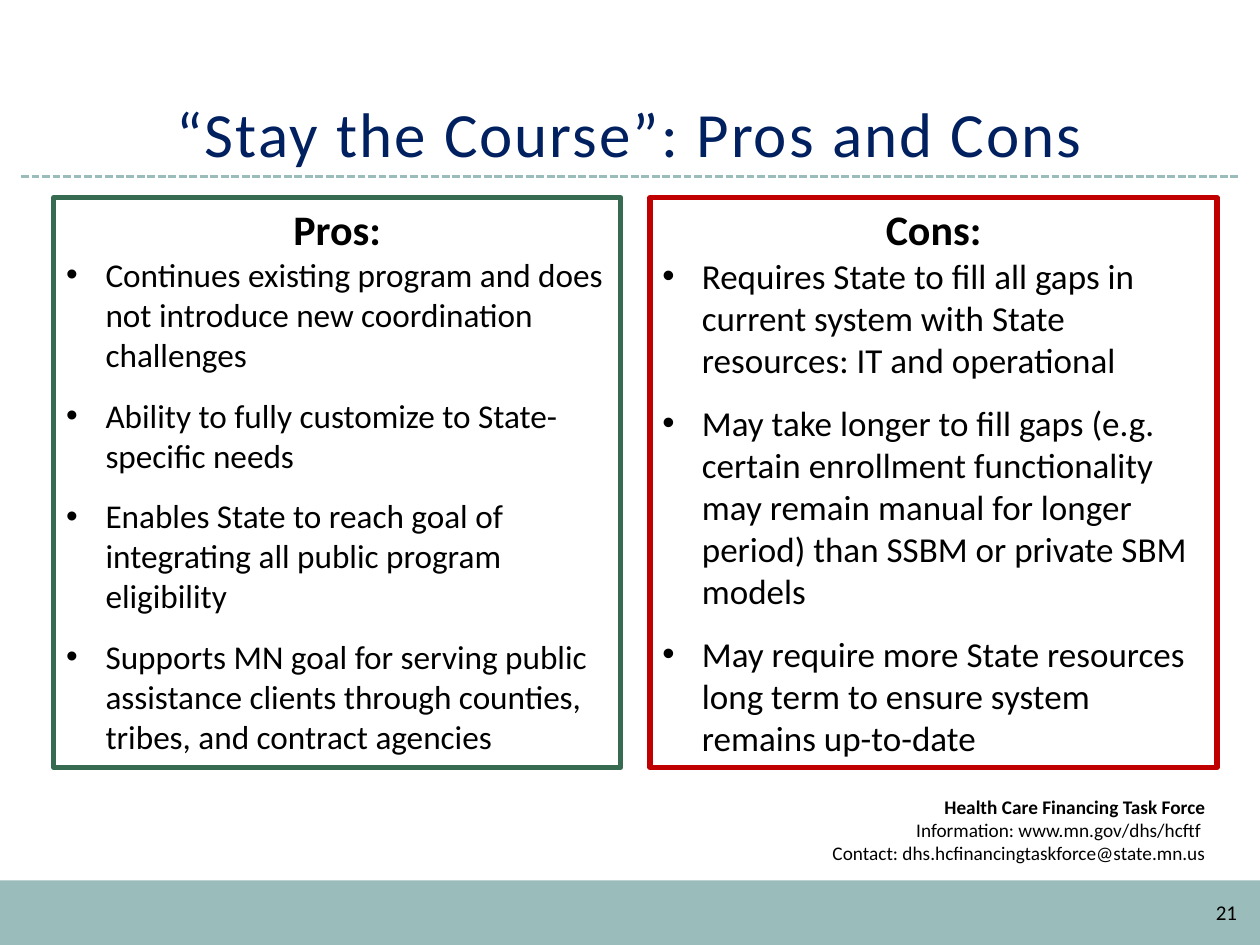
from lxml import etree
from pptx import Presentation
from pptx.dml.color import RGBColor
from pptx.enum import dml, shapes, text
from pptx.oxml.ns import qn
from pptx.util import Pt

SAGE = RGBColor(0x9A, 0xBC, 0xBB)
NAVY = RGBColor(0x00, 0x20, 0x60)
GREEN = RGBColor(0x36, 0x6A, 0x51)
RED = RGBColor(0xC0, 0x00, 0x00)
WHITE = RGBColor(0xFF, 0xFF, 0xFF)
BLACK = RGBColor(0x00, 0x00, 0x00)
ALIGN = text.PP_ALIGN


def add_box(left, top, width, height, fill, outline=None):
    box = slide.shapes.add_shape(
        shapes.MSO_SHAPE.RECTANGLE, Pt(left), Pt(top), Pt(width), Pt(height))
    box.shadow.inherit = False
    box.fill.solid()
    box.fill.fore_color.rgb = fill
    if outline is None:
        box.line.fill.background()
    else:
        box.line.color.rgb = outline
        box.line.width = Pt(3)
    box.text_frame.word_wrap = True
    box.text_frame.vertical_anchor = text.MSO_ANCHOR.TOP
    return box


def write(paragraph, words, size, align=ALIGN.LEFT, color=BLACK, bold=False):
    paragraph.alignment = align
    run = paragraph.add_run()
    run.text = words
    style = {"name": "Calibri", "size": Pt(size), "bold": bold}
    for key, value in style.items():
        setattr(run.font, key, value)
    run.font.color.rgb = color
    return run


prs = Presentation()
prs.slide_width, prs.slide_height = Pt(720), Pt(540)
slide = prs.slides.add_slide(prs.slide_layouts[5])

# Title and the dashed rule under it
title = slide.shapes.title
title_place = {"left": 24, "top": 18, "width": 672, "height": 82.8}
for side, length in title_place.items():
    setattr(title, side, Pt(length))
title.text_frame.vertical_anchor = text.MSO_ANCHOR.BOTTOM
title.text_frame.auto_size = text.MSO_AUTO_SIZE.NONE
heading = title.text_frame.paragraphs[0]
heading.line_spacing = Pt(40)
heading_run = write(heading, "“Stay the Course”: Pros and Cons", 36, ALIGN.CENTER, NAVY)
heading_run.font._element.set("spc", "120")

rule = slide.shapes.add_connector(
    shapes.MSO_CONNECTOR.STRAIGHT, Pt(12), Pt(100.8), Pt(708), Pt(100.8))
rule.line.color.rgb = SAGE
rule.line.width = Pt(1.5)
rule.line.dash_style = dml.MSO_LINE.SQUARE_DOT
etree.SubElement(rule._element.spPr, qn("a:effectLst"))

# Footer band, contact details and page number
add_box(0, 503, 720, 37, SAGE)

contact = add_box(327, 451, 369, 48, WHITE).text_frame
contact_lines = [
    ("Health Care Financing Task Force", True),
    ("Information: www.mn.gov/dhs/hcftf ", False),
    ("Contact: dhs.hcfinancingtaskforce@state.mn.us", False),
]
for i, (words, bold) in enumerate(contact_lines):
    line = contact.add_paragraph() if i else contact.paragraphs[0]
    write(line, words, 11, ALIGN.RIGHT, bold=bold)

page_number = slide.shapes.add_textbox(Pt(672), Pt(507), Pt(42), Pt(28.8)).text_frame
page_number.word_wrap = True
page_number.vertical_anchor = text.MSO_ANCHOR.MIDDLE
write(page_number.paragraphs[0], "21", 12, ALIGN.RIGHT)

# Pros and cons side by side
columns = [
    ("Pros:", GREEN, 19, [
        "Continues existing program and does not introduce new coordination challenges",
        "Ability to fully customize to State-specific needs",
        "Enables State to reach goal of integrating all public program eligibility",
        "Supports MN goal for serving public assistance clients through counties, "
        "tribes, and contract agencies",
    ]),
    ("Cons:", RED, 20, [
        "Requires State to fill all gaps in current system with State resources: "
        "IT and operational",
        "May take longer to fill gaps (e.g. certain enrollment functionality may "
        "remain manual for longer period) than SSBM or private SBM models",
        "May require more State resources long term to ensure system remains up-to-date",
    ]),
]
for i, (label, outline, size, points) in enumerate(columns):
    column = add_box(30.75 + i * 340.75, 113, 324, 325.5, WHITE, outline).text_frame
    write(column.paragraphs[0], label, 24, ALIGN.CENTER, bold=True)
    for point in points:
        item = column.add_paragraph()
        item.space_after = Pt(12)
        props = item._p.get_or_add_pPr()
        props.set("marL", str(Pt(22.5)))
        props.set("indent", str(-Pt(22.5)))
        etree.SubElement(props, qn("a:buFont"), typeface="Arial")
        etree.SubElement(props, qn("a:buChar"), char="•")
        write(item, point, size)

prs.save("out.pptx")
